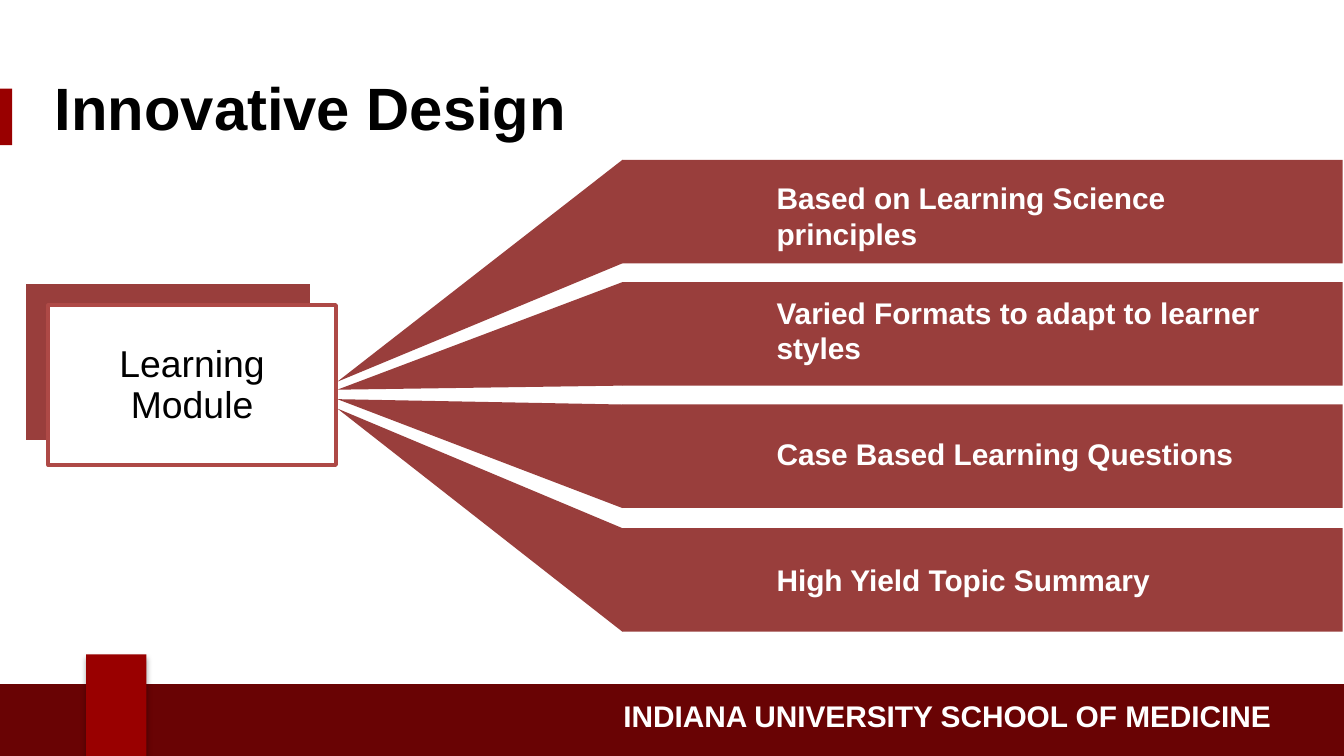
from typing import NamedTuple

from pptx import Presentation
from pptx.dml.color import RGBColor
from pptx.enum.shapes import MSO_SHAPE
from pptx.enum.text import MSO_ANCHOR, PP_ALIGN
from pptx.oxml import parse_xml
from pptx.oxml.ns import nsdecls, qn
from pptx.shapes.autoshape import Shape
from pptx.slide import Slide
from pptx.util import Inches, Pt

RECTANGLE = MSO_SHAPE.RECTANGLE
TOP, MIDDLE = MSO_ANCHOR.TOP, MSO_ANCHOR.MIDDLE
LEFT, CENTER, RIGHT = PP_ALIGN.LEFT, PP_ALIGN.CENTER, PP_ALIGN.RIGHT

BLACK = RGBColor(0x00, 0x00, 0x00)
WHITE = RGBColor(0xFF, 0xFF, 0xFF)
CRIMSON = RGBColor(0x99, 0x00, 0x00)
DARK_RED = RGBColor(0x69, 0x03, 0x04)
BRICK = RGBColor(0x99, 0x3E, 0x3C)
CARD_LINE = RGBColor(0xAE, 0x49, 0x46)

FONT = "Arial"
PAGE_WIDTH = Inches(10)
PAGE_HEIGHT = PAGE_WIDTH * 9 // 16
BAR_LEFT, BAR_WIDTH, BAR_HEIGHT = 4.63, 5.36, 0.77
TIP_LEFT = 2.51


class Area(NamedTuple):
    left: float
    top: float
    width: float
    height: float


class Feature(NamedTuple):
    text: str
    text_top: float
    text_height: float
    bar_top: float
    tip_top: float


FEATURES = [
    Feature("Based on Learning Science principles", 1.29, 0.64, 1.19, 2.84),
    Feature("Varied Formats to adapt to learner styles", 2.14, 0.64, 2.1, 2.9),
    Feature("Case Based Learning Questions", 3.19, 0.37, 3.01, 2.97),
    Feature("High Yield Topic Summary", 4.13, 0.37, 3.93, 3.04),
]


def add_rectangle(page: Slide, area: Area, fill: RGBColor,
                  line: RGBColor | None = None) -> Shape:
    shape = page.shapes.add_shape(RECTANGLE, *map(Inches, area))
    shape.shadow.inherit = False
    shape.fill.solid()
    shape.fill.fore_color.rgb = fill
    if line is None:
        shape.line.fill.background()
    else:
        shape.line.color.rgb = line
        shape.line.width = Pt(2)
    return shape


def add_text(page: Slide, area: Area, text: str, size: int, color: RGBColor,
             bold: bool = True, align: PP_ALIGN = LEFT,
             anchor: MSO_ANCHOR = TOP) -> Shape:
    box = page.shapes.add_textbox(*map(Inches, area))
    frame = box.text_frame
    frame.word_wrap = True
    frame.vertical_anchor = anchor
    para = frame.paragraphs[0]
    para.alignment = align
    span = para.add_run()
    span.text = text
    span.font.name = FONT
    span.font.size = Pt(size)
    span.font.bold = bold
    span.font.color.rgb = color
    return box


def add_wedge(page: Slide, bar_top: float, tip_top: float) -> None:
    """Draw the triangle that fans out from the card to one bar."""
    builder = page.shapes.build_freeform(Inches(BAR_LEFT), Inches(bar_top))
    builder.add_line_segments([
        (Inches(BAR_LEFT), Inches(bar_top + BAR_HEIGHT)),
        (Inches(TIP_LEFT), Inches(tip_top)),
    ])
    wedge = builder.convert_to_shape()
    wedge.shadow.inherit = False
    wedge.fill.solid()
    wedge.fill.fore_color.rgb = BRICK
    wedge.line.fill.background()


def add_soft_shadow(shape: Shape) -> None:
    properties = shape.fill._xPr
    properties.remove(properties.find(qn("a:effectLst")))
    properties.append(parse_xml(
        f'<a:effectLst {nsdecls("a")}>'
        f'<a:outerShdw blurRad="{Pt(3.1)}" dist="{Pt(1.8)}" dir="5400000" rotWithShape="0">'
        '<a:srgbClr val="000000"><a:alpha val="35000"/></a:srgbClr>'
        '</a:outerShdw></a:effectLst>'))


def add_frame(page: Slide) -> None:
    """Draw the footer, its tab and the accent beside the title."""
    add_rectangle(page, Area(-0.03, 5.09, 10.09, 0.59), DARK_RED)
    add_text(page, Area(2.82, 5.14, 6.74, 0.37), "INDIANA UNIVERSITY SCHOOL OF MEDICINE",
             16, WHITE, align=RIGHT, anchor=MIDDLE)
    add_soft_shadow(add_rectangle(page, Area(0.64, 4.87, 0.45, 0.76), CRIMSON))
    add_rectangle(page, Area(0, 0.66, 0.09, 0.42), CRIMSON)


def add_features(page: Slide) -> None:
    for feature in FEATURES:
        add_wedge(page, feature.bar_top, feature.tip_top)
        add_rectangle(page, Area(BAR_LEFT, feature.bar_top, BAR_WIDTH, BAR_HEIGHT), BRICK)
        add_text(page, Area(5.68, feature.text_top, 3.96, feature.text_height),
                 feature.text, 16, WHITE)


def add_module_card(page: Slide) -> None:
    add_rectangle(page, Area(0.18, 2.1, 2.14, 1.19), BRICK, WHITE)
    add_rectangle(page, Area(0.36, 2.27, 2.14, 1.19), WHITE, CARD_LINE)
    label = add_text(page, Area(0.4, 2.31, 2.06, 1.12), "Learning Module", 20, BLACK,
                     bold=False, align=CENTER, anchor=MIDDLE)
    frame = label.text_frame
    frame.margin_left = frame.margin_right = Inches(0.08)
    frame.margin_top = frame.margin_bottom = Inches(0.08)
    frame.paragraphs[0].line_spacing = 0.9


def main() -> None:
    deck = Presentation()
    deck.slide_width, deck.slide_height = PAGE_WIDTH, PAGE_HEIGHT
    page = deck.slides.add_slide(deck.slide_layouts[6])
    add_frame(page)
    add_features(page)
    add_text(page, Area(0.31, 0.48, 8.75, 0.76), "Innovative Design", 32, BLACK)
    add_module_card(page)
    deck.save("out.pptx")


if __name__ == "__main__":
    main()
